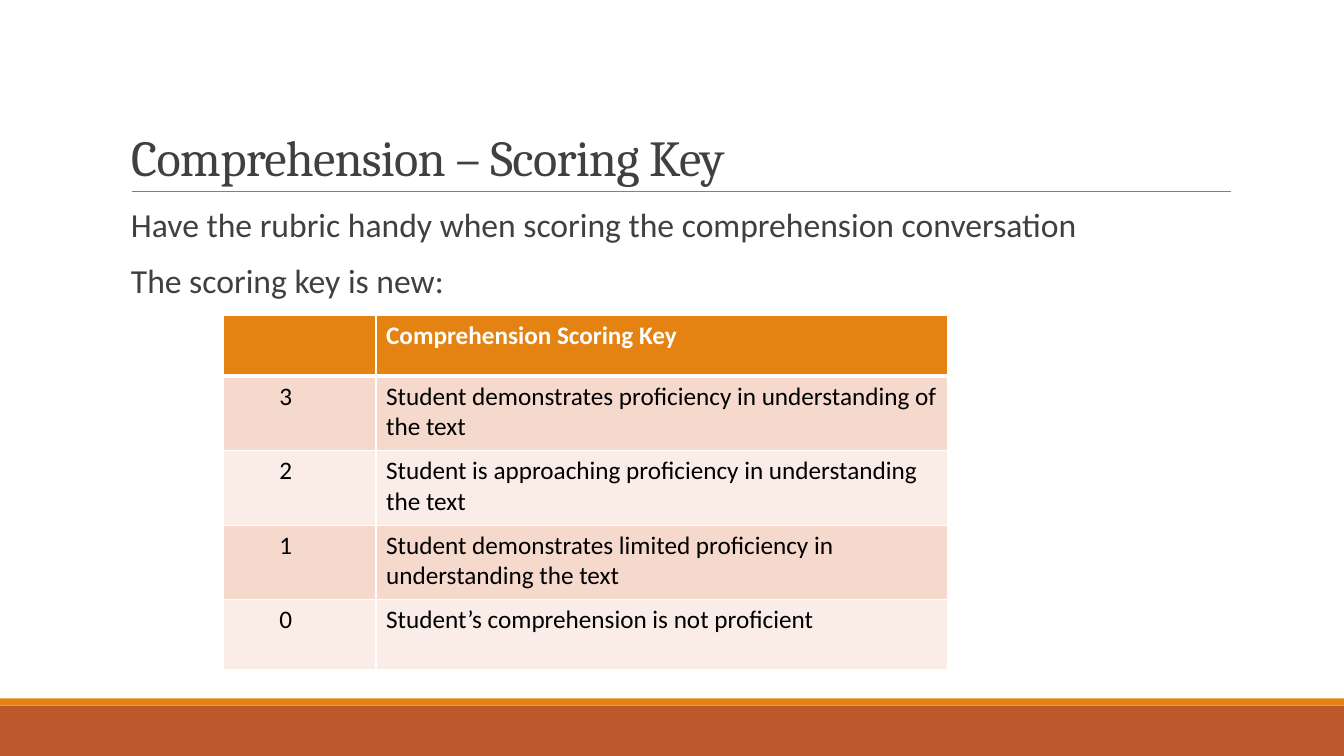
from dataclasses import dataclass

from lxml.etree import SubElement
from pptx import Presentation
from pptx.dml.color import RGBColor
from pptx.enum.shapes import MSO_CONNECTOR, MSO_SHAPE
from pptx.enum.text import MSO_ANCHOR, MSO_AUTO_SIZE, PP_ALIGN
from pptx.oxml.ns import qn
from pptx.slide import Slide
from pptx.table import _Cell as Cell
from pptx.text.text import TextFrame
from pptx.util import Inches, Pt

WHITE = RGBColor(0xFF, 0xFF, 0xFF)
BLACK = RGBColor(0x00, 0x00, 0x00)
DARK_GRAY = RGBColor(0x40, 0x40, 0x40)
RULE_GRAY = RGBColor(0x80, 0x80, 0x80)
ORANGE = RGBColor(0xE4, 0x83, 0x12)
RUST = RGBColor(0xBD, 0x58, 0x2C)
ROW_FILLS = (RGBColor(0xF5, 0xD9, 0xCC), RGBColor(0xFA, 0xED, 0xE7))

COLUMN_WIDTHS = (1.51, 5.67)
HEADER_HEIGHT = 0.6
SCORE_INDENT = 0.55


@dataclass(frozen=True)
class Band:
    top: float
    height: float
    color: RGBColor


@dataclass(frozen=True)
class Score:
    points: str
    meaning: str
    height: float = 0.74


BANDS = (Band(7, 0.5, RUST), Band(6.93, 0.07, ORANGE))
BODY_LINES = (
    "Have the rubric handy when scoring the comprehension conversation",
    "The scoring key is new:",
)
SCORES = (
    Score("3", "Student demonstrates proficiency in understanding of the text"),
    Score("2", "Student is approaching proficiency in understanding the text"),
    Score("1", "Student demonstrates limited proficiency in understanding the text"),
    Score("0", "Student’s comprehension is not proficient", height=0.69),
)


def write_text(frame: TextFrame, *lines: str, size: float, color: RGBColor,
               font: str = "Calibri", bold: bool = False, line_spacing: float = 1.0,
               before: float = 0, after: float = 0, tracking: float = 0) -> None:
    frame.word_wrap = True
    for index, line in enumerate(lines):
        paragraph = frame.add_paragraph() if index else frame.paragraphs[0]
        paragraph.alignment = PP_ALIGN.LEFT
        paragraph.line_spacing = line_spacing
        paragraph.space_before = Pt(before)
        paragraph.space_after = Pt(after)
        run = paragraph.add_run()
        run.text = line
        run.font.name = font
        run.font.size = Pt(size)
        run.font.bold = bold
        run.font.color.rgb = color
        if tracking:
            run.font._element.set("spc", str(round(tracking * 100)))


def add_band(slide: Slide, band: Band, width: int) -> None:
    shape = slide.shapes.add_shape(
        MSO_SHAPE.RECTANGLE, 0, Inches(band.top), width, Inches(band.height))
    shape.shadow.inherit = False
    shape.fill.solid()
    shape.fill.fore_color.rgb = band.color
    shape.line.fill.background()


def add_title_rule(slide: Slide) -> None:
    rule = slide.shapes.add_connector(
        MSO_CONNECTOR.STRAIGHT, Inches(1.31), Inches(1.9), Inches(12.21), Inches(1.9))
    rule.line.color.rgb = RULE_GRAY
    rule.line.width = Pt(0.5)
    SubElement(rule._element.spPr, qn("a:effectLst"))


def add_title(slide: Slide) -> None:
    title = slide.shapes.title
    title.left, title.top = Inches(1.2), Inches(0.31)
    title.width, title.height = Inches(11), Inches(1.59)
    frame = title.text_frame
    frame.auto_size = MSO_AUTO_SIZE.NONE
    frame.vertical_anchor = MSO_ANCHOR.BOTTOM
    write_text(frame, "Comprehension – Scoring Key", size=36, color=DARK_GRAY,
               font="Cambria", line_spacing=0.85, tracking=-0.5)


def add_body(slide: Slide) -> None:
    box = slide.shapes.add_textbox(Inches(1.2), Inches(2.02), Inches(10.11), Inches(4.4))
    box.text_frame.margin_right = 0
    write_text(box.text_frame, *BODY_LINES, size=24, color=DARK_GRAY,
               line_spacing=0.9, before=12, after=2)


def style_cell(cell: Cell, fill: RGBColor, bottom: float = 1, top: float = 1) -> None:
    """Draw the white borders, widths in points, and then fill the cell."""
    properties = cell._tc.get_or_add_tcPr()
    for side, width in (("L", 1), ("R", 1), ("T", top), ("B", bottom)):
        border = SubElement(properties, qn(f"a:ln{side}"), w=str(Pt(width)))
        SubElement(SubElement(border, qn("a:solidFill")), qn("a:srgbClr"), val=str(WHITE))
    cell.fill.solid()
    cell.fill.fore_color.rgb = fill


def add_scoring_table(slide: Slide) -> None:
    heights = (HEADER_HEIGHT, *(score.height for score in SCORES))
    table = slide.shapes.add_table(
        len(heights), len(COLUMN_WIDTHS), Inches(2.22), Inches(3.13),
        Inches(sum(COLUMN_WIDTHS)), Inches(sum(heights))).table
    for column, width in zip(table.columns, COLUMN_WIDTHS):
        column.width = Inches(width)
    for row, height in zip(table.rows, heights):
        row.height = Inches(height)

    for cell in table.rows[0].cells:
        style_cell(cell, ORANGE, bottom=3)
    write_text(table.cell(0, 1).text_frame, "Comprehension Scoring Key",
               size=18, color=WHITE, bold=True)

    for index, score in enumerate(SCORES):
        cells = table.rows[index + 1].cells
        for cell, text in zip(cells, (score.points, score.meaning)):
            style_cell(cell, ROW_FILLS[index % 2], top=1 if index else 3)
            write_text(cell.text_frame, text, size=18, color=BLACK)
        cells[0].margin_left = Inches(SCORE_INDENT)


def main() -> None:
    presentation = Presentation()
    presentation.slide_width = Inches(13.33)
    presentation.slide_height = Inches(7.5)
    slide = presentation.slides.add_slide(presentation.slide_layouts[5])
    for band in BANDS:
        add_band(slide, band, presentation.slide_width)
    add_title_rule(slide)
    add_title(slide)
    add_body(slide)
    add_scoring_table(slide)
    presentation.save("out.pptx")


if __name__ == "__main__":
    main()
